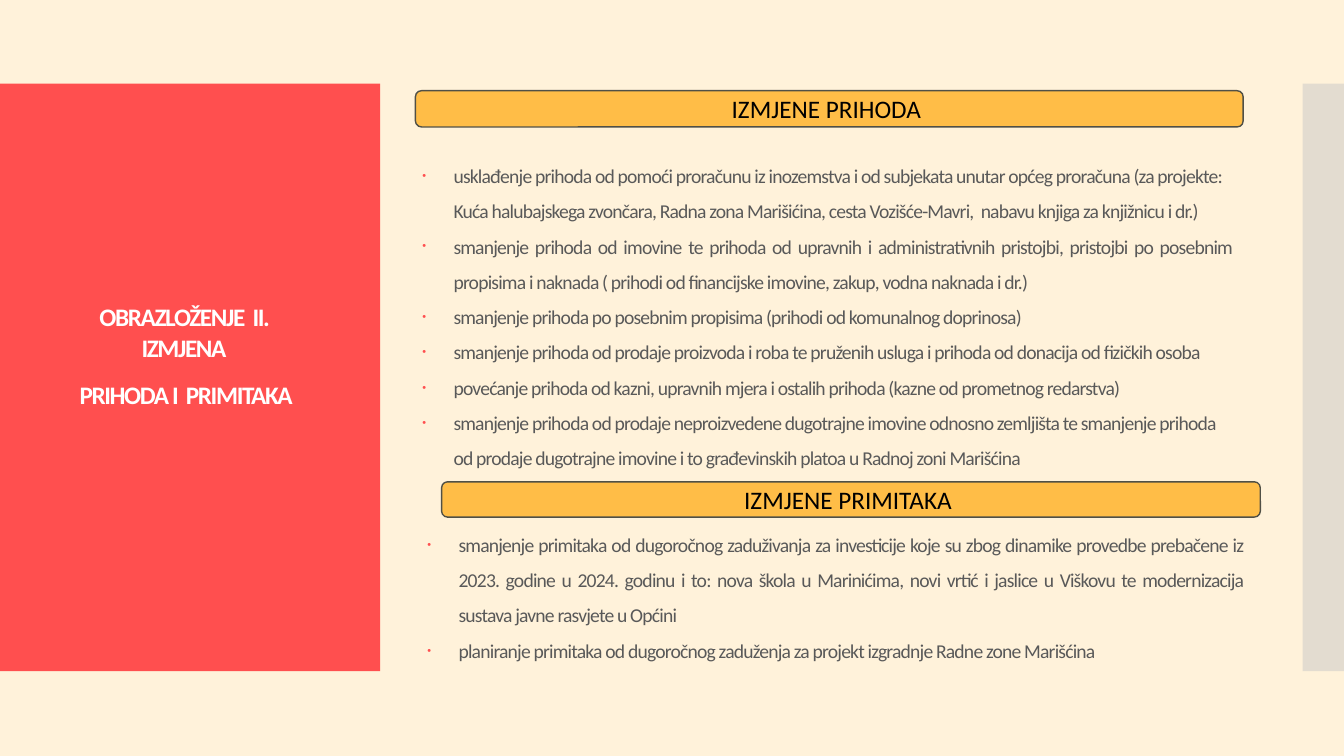
from lxml.etree import SubElement
from pptx import Presentation
from pptx.dml.color import RGBColor
from pptx.enum.shapes import MSO_SHAPE
from pptx.enum.text import MSO_ANCHOR, MSO_AUTO_SIZE, PP_ALIGN
from pptx.oxml.ns import qn
from pptx.util import Inches, Pt

CREAM, RED, GREY, AMBER = "FFF2DA", "FF4F4F", "C8C8C8", "FFBD47"
OUTLINE, WHITE, BLACK, BODY = "505046", "FFFFFF", "000000", "595959"
LEFT, JUSTIFY = PP_ALIGN.LEFT, PP_ALIGN.JUSTIFY

HEADING = ["OBRAZLOŽENJE  II. IZMJENA", " PRIHODA I  PRIMITAKA"]
REVENUE_CHANGES = [
    (LEFT, "usklađenje prihoda od pomoći proračunu iz inozemstva i od subjekata unutar općeg "
           "proračuna (za projekte:  Kuća halubajskega zvončara, Radna zona Marišićina, cesta "
           "Vozišće-Mavri,  nabavu knjiga za knjižnicu i dr.)"),
    (JUSTIFY, "smanjenje prihoda od imovine te prihoda od upravnih i administrativnih pristojbi, "
              "pristojbi po posebnim propisima i naknada ( prihodi od financijske imovine, zakup, "
              "vodna naknada i dr.)"),
    (LEFT, "smanjenje prihoda po posebnim propisima (prihodi od komunalnog doprinosa)"),
    (LEFT, "smanjenje prihoda od prodaje proizvoda i roba te pruženih usluga i prihoda od "
           "donacija od fizičkih osoba"),
    (LEFT, "povećanje prihoda od kazni, upravnih mjera i ostalih prihoda (kazne od prometnog "
           "redarstva)"),
    (LEFT, "smanjenje prihoda od prodaje neproizvedene dugotrajne imovine odnosno zemljišta te "
           "smanjenje prihoda od prodaje dugotrajne imovine i to građevinskih platoa u Radnoj "
           "zoni Marišćina"),
]
RECEIPT_CHANGES = [
    (JUSTIFY, "smanjenje primitaka od dugoročnog zaduživanja za investicije koje su zbog dinamike "
              "provedbe prebačene iz 2023. godine u 2024. godinu i to: nova škola u Marinićima, "
              "novi vrtić i jaslice u Viškovu te modernizacija sustava javne rasvjete u Općini"),
    (JUSTIFY, "planiranje primitaka od dugoročnog zaduženja za projekt izgradnje Radne zone "
              "Marišćina "),
]


def colour(hex_value):
    return RGBColor.from_string(hex_value)


def apply(target, formats):
    for name, value in formats.items():
        setattr(target, name, value)


class BudgetSlide:
    font_name = "Calibri"

    def __init__(self, deck, background):
        self.slide = deck.slides.add_slide(deck.slide_layouts[5])
        self.slide.background.fill.solid()
        self.slide.background.fill.fore_color.rgb = colour(background)

    def add_text(self, paragraph, text, size, ink, spacing=0, bold=False):
        run = paragraph.add_run()
        run.text = text
        apply(run.font, {"name": self.font_name, "size": Pt(size), "bold": bold})
        run.font.color.rgb = colour(ink)
        if spacing:
            run.font._element.set("spc", str(round(spacing * 100)))

    def block(self, kind, box, fill, opacity=100):
        shape = self.slide.shapes.add_shape(kind, *map(Inches, box))
        shape.shadow.inherit = False
        shape.fill.solid()
        shape.fill.fore_color.rgb = colour(fill)
        shape.line.fill.background()
        if opacity < 100:
            tint = shape.fill._xPr.find(".//" + qn("a:srgbClr"))
            SubElement(tint, qn("a:alpha"), val=str(opacity * 1000))
        return shape

    def banner(self, box, text):
        banner = self.block(MSO_SHAPE.ROUNDED_RECTANGLE, box, AMBER)
        banner.line.color.rgb = colour(OUTLINE)
        banner.line.width = Pt(1)
        apply(banner.text_frame, {"vertical_anchor": MSO_ANCHOR.MIDDLE, "word_wrap": True})
        label = banner.text_frame.paragraphs[0]
        label.alignment = PP_ALIGN.CENTER
        self.add_text(label, text, 18, BLACK)

    def heading(self, box, lines):
        title = self.slide.shapes.title
        apply(title, dict(zip(("left", "top", "width", "height"), map(Inches, box))))
        frame = title.text_frame
        apply(frame, {"vertical_anchor": MSO_ANCHOR.BOTTOM, "word_wrap": True,
                      "auto_size": MSO_AUTO_SIZE.NONE})
        for index, line in enumerate(lines):
            paragraph = frame.add_paragraph() if index else frame.paragraphs[0]
            apply(paragraph, {"alignment": PP_ALIGN.CENTER, "space_before": Pt(12)})
            self.add_text(paragraph, line, 18, WHITE, spacing=-1, bold=True)

    def bullets(self, box, items):
        frame = self.slide.shapes.add_textbox(*map(Inches, box)).text_frame
        apply(frame, {"word_wrap": True, "auto_size": MSO_AUTO_SIZE.SHAPE_TO_FIT_TEXT})
        for index, (alignment, text) in enumerate(items):
            paragraph = frame.add_paragraph() if index else frame.paragraphs[0]
            apply(paragraph, {"alignment": alignment, "line_spacing": 1.5})
            self.bullet_mark(paragraph)
            self.add_text(paragraph, text, 14, BODY, spacing=-0.6)

    def bullet_mark(self, paragraph):
        properties = paragraph._p.get_or_add_pPr()
        indent = Inches(0.31)
        properties.set("marL", str(indent))
        properties.set("indent", str(-indent))
        SubElement(SubElement(properties, qn("a:buClr")), qn("a:srgbClr"), val=RED)
        SubElement(properties, qn("a:buSzPct"), val="55000")
        SubElement(properties, qn("a:buFont"), typeface="Arial")
        SubElement(properties, qn("a:buChar"), char="•")


def main():
    deck = Presentation()
    apply(deck, {"slide_width": Inches(13.33), "slide_height": Inches(7.5)})
    page = BudgetSlide(deck, CREAM)

    # Side panels and heading
    page.block(MSO_SHAPE.RECTANGLE, (0, 0.83, 3.77, 5.83), RED)
    page.block(MSO_SHAPE.RECTANGLE, (12.92, 0.83, 0.41, 5.83), GREY, opacity=50)
    page.heading((0.54, 1.35, 2.57, 2.76), HEADING)
    # The title placeholder comes first on the slide, so lift it above the red panel
    tree = page.slide.shapes._spTree
    tree.append(page.slide.shapes.title._element)

    # Revenue
    page.bullets((4.09, 1.46, 8.23, 3.25), REVENUE_CHANGES)
    page.banner((4.12, 0.9, 8.21, 0.36), "IZMJENE PRIHODA ")

    # Receipts
    page.banner((4.38, 4.78, 8.12, 0.35), "IZMJENE PRIMITAKA ")
    page.bullets((4.14, 5.12, 8.29, 1.48), RECEIPT_CHANGES)

    deck.save("out.pptx")


if __name__ == "__main__":
    main()
